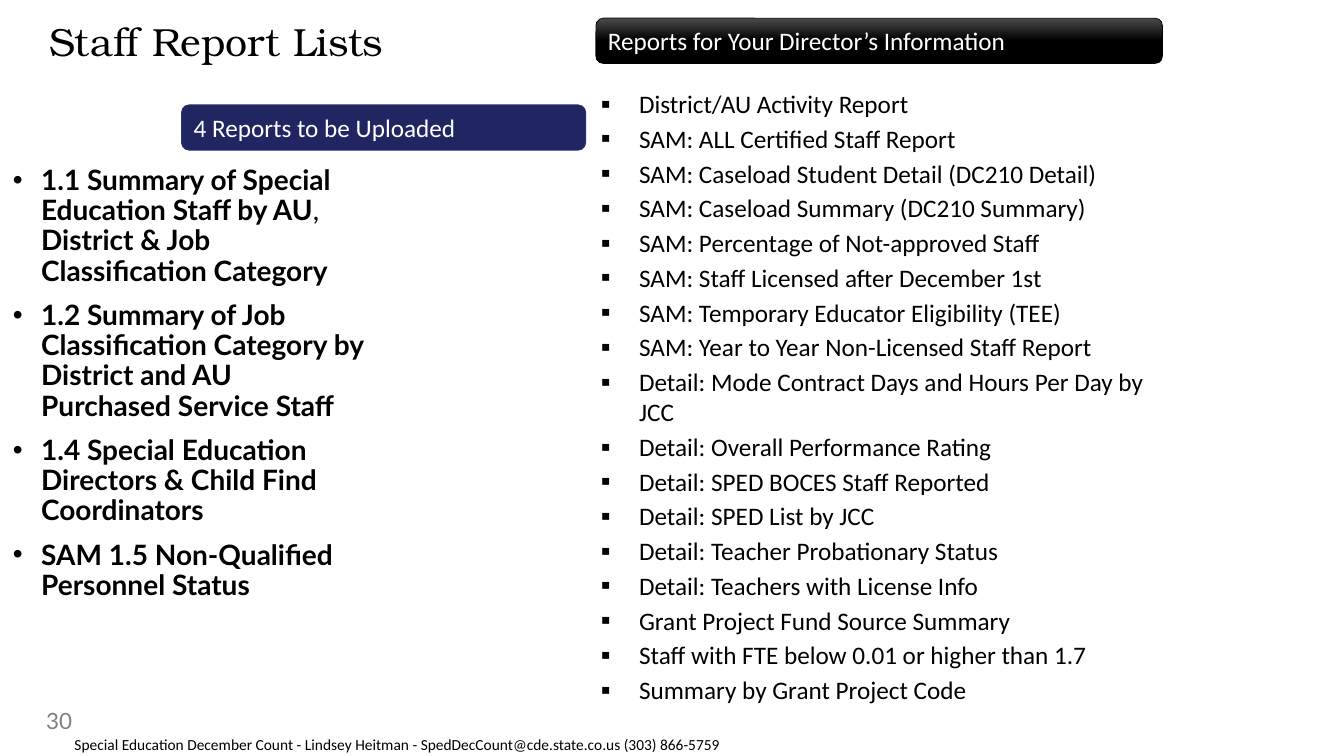
from dataclasses import dataclass

from lxml import etree
from pptx import Presentation
from pptx.dml.color import RGBColor
from pptx.enum.shapes import MSO_SHAPE
from pptx.enum.text import MSO_ANCHOR
from pptx.oxml.ns import qn
from pptx.util import Inches, Pt

RECT = MSO_SHAPE.RECTANGLE
ROUND_RECT = MSO_SHAPE.ROUNDED_RECTANGLE
TOP = MSO_ANCHOR.TOP
MIDDLE = MSO_ANCHOR.MIDDLE


@dataclass(frozen=True)
class Theme:
    black: str = "000000"
    white: str = "FFFFFF"
    gray: str = "808080"
    navy: str = "212663"
    navy_edge: str = "2C3384"
    charcoal: str = "4B4B4B"
    title_font: str = "TeX Gyre Bonum"
    upload_font: str = "Lato"
    body_font: str = "Calibri"
    title_size: int = 28
    upload_size: int = 20
    body_size: int = 18
    number_size: int = 16
    footer_size: int = 11


THEME = Theme()

UPLOADS = [
    [("1.1 Summary of Special Education Staff by AU", True), (", ", False),
     ("District & Job Classification Category", True)],
    [("1.2 Summary of Job Classification Category by District and AU "
      "Purchased Service Staff", True)],
    [("1.4 Special Education Directors & Child Find Coordinators", True)],
    [("SAM 1.5 Non-Qualified Personnel Status", True)],
]

DIRECTOR_REPORTS = [
    "District/AU Activity Report",
    "SAM: ALL Certified Staff Report",
    "SAM: Caseload Student Detail (DC210 Detail)",
    "SAM: Caseload Summary (DC210 Summary)",
    "SAM: Percentage of Not-approved Staff",
    "SAM: Staff Licensed after December 1st",
    "SAM: Temporary Educator Eligibility (TEE)",
    "SAM: Year to Year Non-Licensed Staff Report",
    "Detail: Mode Contract Days and Hours Per Day by JCC",
    "Detail: Overall Performance Rating",
    "Detail: SPED BOCES Staff Reported",
    "Detail: SPED List by JCC",
    "Detail: Teacher Probationary Status",
    "Detail: Teachers with License Info",
    "Grant Project Fund Source Summary",
    "Staff with FTE below 0.01 or higher than 1.7",
    "Summary by Grant Project Code",
]


def rgb(color):
    return RGBColor.from_string(color)


def style(r, font, size, color, bold=False):
    r.font.name = font
    r.font.size = Pt(size)
    r.font.color.rgb = rgb(color)
    r.font.bold = bold


def set_bullet(p, char, indent, hang, size_pct):
    pPr = p._p.get_or_add_pPr()
    pPr.set("marL", str(Inches(indent)))
    pPr.set("indent", str(-Inches(hang)))
    pPr.set("algn", "l")
    color = etree.SubElement(pPr, qn("a:buClr"))
    etree.SubElement(color, qn("a:srgbClr"), val=THEME.black)
    etree.SubElement(pPr, qn("a:buSzPct"), val=str(size_pct * 1000))
    etree.SubElement(pPr, qn("a:buFont"), typeface="Arial")
    etree.SubElement(pPr, qn("a:buChar"), char=char)


def add_text(s, box, text, font, size, color, anchor=TOP, margin=None):
    sp = s.shapes.add_textbox(*map(Inches, box))
    tf = sp.text_frame
    tf.word_wrap = True
    tf.vertical_anchor = anchor
    if margin is not None:
        tf.margin_left = tf.margin_right = Inches(margin)
        tf.margin_top = tf.margin_bottom = Inches(margin)
    p = tf.paragraphs[0]
    p.text = text
    style(p.runs[0], font, size, color)
    return p


def add_list(s, box, items, bullet, font, size, gap, spacing=1.0):
    sp = s.shapes.add_shape(RECT, *map(Inches, box))
    sp.shadow.inherit = False
    sp.fill.solid()
    sp.fill.fore_color.rgb = rgb(THEME.white)
    sp.line.fill.background()
    tf = sp.text_frame
    tf.word_wrap = True
    tf.vertical_anchor = TOP
    for i, parts in enumerate(items):
        p = tf.add_paragraph() if i else tf.paragraphs[0]
        set_bullet(p, *bullet)
        p.line_spacing = spacing
        p.space_before = Pt(gap if i else 0)
        for text, bold in parts:
            r = p.add_run()
            r.text = text
            style(r, font, size, THEME.black, bold)


def add_banner(s, box, text, edge):
    sp = s.shapes.add_shape(ROUND_RECT, *map(Inches, box))
    sp.shadow.inherit = False
    sp.line.color.rgb = rgb(edge)
    sp.line.width = Pt(0.5)
    tf = sp.text_frame
    tf.word_wrap = True
    tf.vertical_anchor = MIDDLE
    p = tf.paragraphs[0]
    p.text = text
    p._p.get_or_add_pPr().set("algn", "l")
    style(p.runs[0], THEME.body_font, THEME.body_size, THEME.white)
    return sp


def fill_gradient(sp, stops):
    sp.fill.gradient()
    sp.fill.gradient_angle = 270
    for stop, (position, color) in zip(sp.fill.gradient_stops, stops):
        stop.position = position
        stop.color.rgb = rgb(color)


def main():
    prs = Presentation()
    prs.slide_width, prs.slide_height = Inches(13.33), Inches(7.5)
    s = prs.slides.add_slide(prs.slide_layouts[6])

    title = add_text(s, (0.49, 0.22, 8.82, 0.98), "Staff Report Lists",
                     THEME.title_font, THEME.title_size, THEME.black, margin=0)
    title.line_spacing = 0.9

    add_list(s, (0, 1.6, 3.73, 5.01), UPLOADS, ("•", 0.31, 0.28, 100),
             THEME.upload_font, THEME.upload_size, gap=10, spacing=0.9)
    add_list(s, (5.67, 0.83, 5.91, 6.67),
             [[(report, False)] for report in DIRECTOR_REPORTS],
             ("▪", 0.57, 0.38, 110), THEME.body_font, THEME.body_size, gap=3.2)

    uploads = add_banner(s, (1.8, 1.04, 4.01, 0.45),
                         "4 Reports to be Uploaded", THEME.navy_edge)
    uploads.fill.solid()
    uploads.fill.fore_color.rgb = rgb(THEME.navy)
    director = add_banner(s, (5.91, 0.18, 5.62, 0.45),
                          "Reports for Your Director’s Information", THEME.black)
    fill_gradient(director, [(0, THEME.charcoal), (0.5, THEME.black)])

    add_text(s, (0.36, 6.95, 3, 0.4), "30", THEME.upload_font,
             THEME.number_size, THEME.gray, anchor=MIDDLE)
    add_text(s, (0.64, 7.24, 7.75, 0.29),
             "Special Education December Count - Lindsey Heitman - "
             "SpedDecCount@cde.state.co.us (303) 866-5759",
             THEME.body_font, THEME.footer_size, THEME.black)

    prs.save("out.pptx")


if __name__ == "__main__":
    main()
